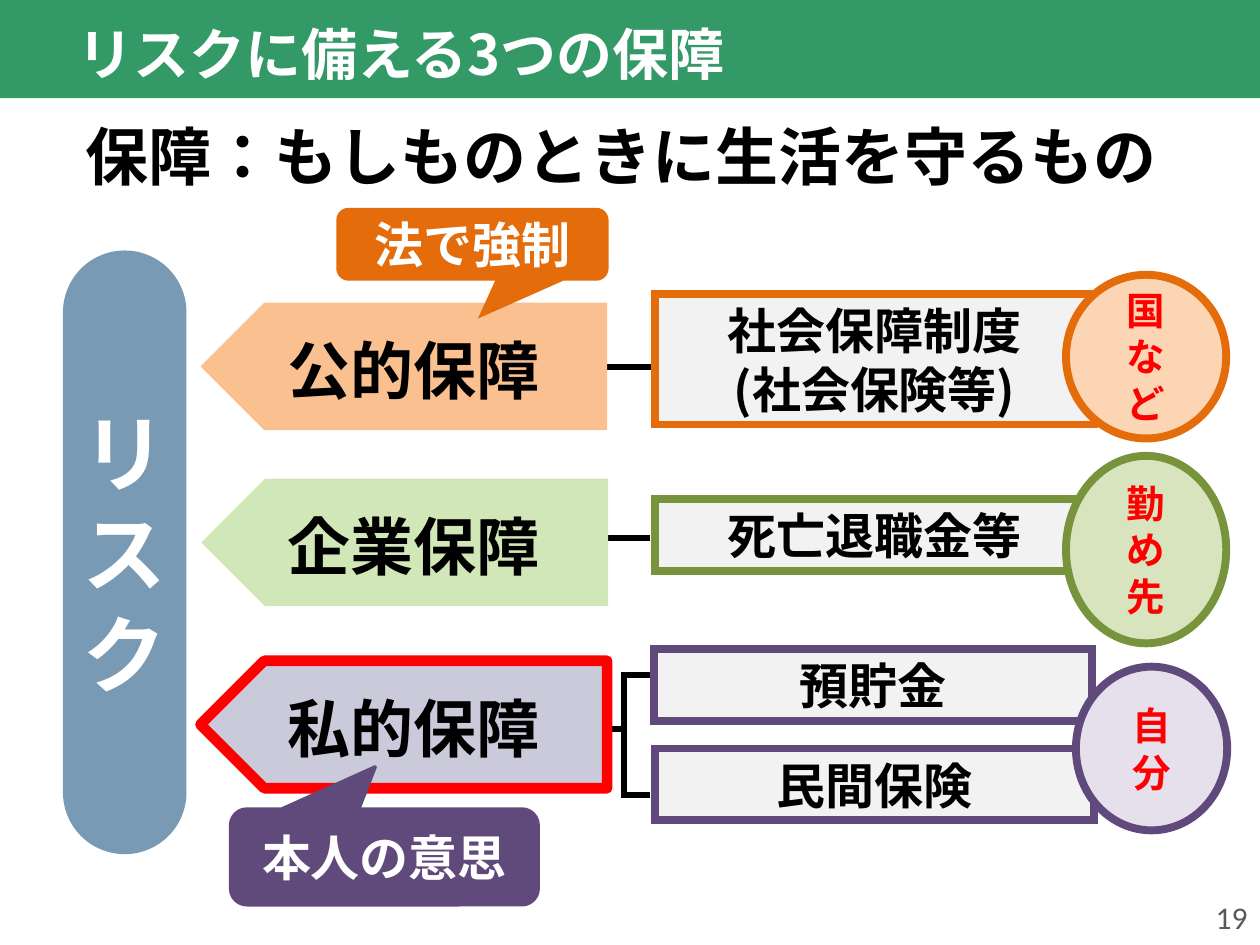
"""Build the slide on the three kinds of protection against risk."""
from typing import NamedTuple, Optional

from lxml import etree
from pptx import Presentation
from pptx.dml.color import RGBColor
from pptx.enum.lang import MSO_LANGUAGE_ID
from pptx.enum.shapes import MSO_CONNECTOR, MSO_SHAPE
from pptx.enum.text import MSO_ANCHOR, MSO_AUTO_SIZE, PP_ALIGN
from pptx.oxml.ns import qn
from pptx.util import Cm, Pt

RECTANGLE = MSO_SHAPE.RECTANGLE
ROUNDED = MSO_SHAPE.ROUNDED_RECTANGLE
OVAL = MSO_SHAPE.OVAL
PENTAGON = MSO_SHAPE.PENTAGON
CALLOUT = MSO_SHAPE.ROUNDED_RECTANGULAR_CALLOUT
STRAIGHT = MSO_CONNECTOR.STRAIGHT
MIDDLE = MSO_ANCHOR.MIDDLE
NO_AUTOFIT = MSO_AUTO_SIZE.NONE
LEFT, CENTER, RIGHT = PP_ALIGN.LEFT, PP_ALIGN.CENTER, PP_ALIGN.RIGHT
JAPANESE = MSO_LANGUAGE_ID.JAPANESE

JAPANESE_FONT = "Noto Sans CJK JP"
NUMBER_FONT = "Calibri"
TITLE_ONLY = 5
COLORS = {
    "banner": "339966", "white": "FFFFFF", "black": "000000", "red": "FF0000",
    "gray": "595959", "box": "F2F2F2", "risk": "799AB4",
    "orange": "E46C0A", "green": "77933C", "purple": "604A7B",
    "public arrow": "FAC090", "company arrow": "D2E7B8", "private arrow": "CBCADB",
    "public oval": "FCD5B5", "company oval": "D7E4BD", "private oval": "E6E0EC",
}


class Area(NamedTuple):
    """A place on the slide in centimetres."""
    left: float
    top: float
    width: float
    height: float


class TextStyle(NamedTuple):
    """The look of a text."""
    size: float
    color: str = "black"
    align: PP_ALIGN = CENTER
    font: str = JAPANESE_FONT
    bold: bool = True


class Block(NamedTuple):
    """A filled shape with optional outline and text."""
    kind: MSO_SHAPE
    area: Area
    fill: str
    line: Optional[str] = None
    line_width: float = 4.5
    lines: tuple = ()
    style: TextStyle = TextStyle(28)
    adjustments: tuple = ()
    margins: Optional[tuple] = None


class Arrow(NamedTuple):
    """A left-pointing arrow and its label."""
    label: str
    left: float
    top: float
    fill: str
    line: Optional[str] = None


def color(name: str) -> RGBColor:
    """Return the named colour."""
    return RGBColor.from_string(COLORS[name])


def lengths(values) -> list:
    """Turn centimetres into lengths."""
    return [Cm(value) for value in values]


def write_lines(frame, lines: tuple, style: TextStyle) -> None:
    """Write one paragraph per line, centred vertically."""
    frame.vertical_anchor = MIDDLE
    for index, line in enumerate(lines):
        paragraph = frame.add_paragraph() if index else frame.paragraphs[0]
        paragraph.alignment = style.align
        run = paragraph.add_run()
        run.text = line
        run.font.size = Pt(style.size)
        run.font.bold = style.bold
        run.font.name = style.font
        run.font.language_id = JAPANESE
        run.font.color.rgb = color(style.color)
        east_asian = etree.SubElement(run.font._element, qn("a:ea"))
        east_asian.set("typeface", style.font)


def add_text(slide, area: Area, text: str, style: TextStyle, wrap: bool = True) -> None:
    """Add a text box."""
    frame = slide.shapes.add_textbox(*lengths(area)).text_frame
    frame.word_wrap = wrap
    write_lines(frame, (text,), style)


def add_block(slide, block: Block):
    """Add a shape and return it."""
    shape = slide.shapes.add_shape(block.kind, *lengths(block.area))
    shape.shadow.inherit = False
    shape.fill.solid()
    shape.fill.fore_color.rgb = color(block.fill)
    if block.line:
        shape.line.color.rgb = color(block.line)
        shape.line.width = Pt(block.line_width)
        if block.kind == RECTANGLE:
            etree.SubElement(shape.element.spPr.find(qn("a:ln")), qn("a:miter"), lim="800000")
    else:
        shape.line.fill.background()
    for index, value in enumerate(block.adjustments):
        shape.adjustments[index] = value
    frame = shape.text_frame
    frame.word_wrap = True
    if block.margins:
        horizontal, vertical = lengths(block.margins)
        frame.margin_left = frame.margin_right = horizontal
        frame.margin_top = frame.margin_bottom = vertical
    write_lines(frame, block.lines, block.style)
    return shape


def add_line(slide, points: tuple) -> None:
    """Add a thick black connecting line."""
    connector = slide.shapes.add_connector(STRAIGHT, *lengths(points))
    connector.line.color.rgb = color("black")
    connector.line.width = Pt(3.5)
    etree.SubElement(connector.element.spPr, qn("a:effectLst"))


def add_arrow(slide, arrow: Arrow) -> None:
    """Add an arrow with its label."""
    area = Area(arrow.left, arrow.top, 8.2, 2.57)
    shape = add_block(slide, Block(PENTAGON, area, arrow.fill, arrow.line, 6))
    shape.rotation = 180
    label_area = Area(5.54, arrow.top + 0.44, 5.64, 1.8)
    add_text(slide, label_area, arrow.label, TextStyle(36, align=LEFT), wrap=False)


def add_title(slide) -> None:
    """Place the title on its banner."""
    title = slide.shapes.title
    banner = add_block(slide, Block(RECTANGLE, Area(0, 0, 25.4, 1.98), "banner"))
    title.element.addprevious(banner.element)
    title.left, title.top, title.width, title.height = lengths((1.3, 0.08, 17.53, 2))
    title.text_frame.auto_size = NO_AUTOFIT
    write_lines(title.text_frame, ("リスクに備える3つの保障",), TextStyle(32, "white", LEFT))


def main() -> None:
    """Build and save the presentation."""
    presentation = Presentation()
    presentation.slide_width, presentation.slide_height = Cm(25.4), Cm(19.05)
    slide = presentation.slides.add_slide(presentation.slide_layouts[TITLE_ONLY])
    add_title(slide)
    add_text(slide, Area(1.04, 2.13, 22.94, 2), "保障：もしものときに生活を守るもの", TextStyle(36))

    for points in (
        (11.96, 7.39, 13.18, 7.39), (11.96, 10.85, 13.1, 10.85),
        (11.94, 14.7, 12.55, 14.7), (12.52, 16.03, 13.1, 16.03),
        (12.52, 13.61, 13.1, 13.61), (12.57, 13.56, 12.57, 16.05),
    ):
        add_line(slide, points)

    for left, top, height, line, lines in (
        (13.21, 5.92, 2.64, "orange", ("社会保障制度", "(社会保険等)")),
        (13.21, 10.06, 1.45, "green", ("死亡退職金等",)),
        (13.18, 13.08, 1.45, "purple", ("預貯金",)),
        (13.21, 15.09, 1.45, "purple", ("民間保険",)),
    ):
        area = Area(left, top, 8.84, height)
        add_block(slide, Block(RECTANGLE, area, "box", line, lines=lines, margins=(0.25, 0)))

    add_block(slide, Block(ROUNDED, Area(1.27, 5.05, 2.49, 12.17), "risk", lines=tuple("リスク"),
                           style=TextStyle(48, "white"), adjustments=(0.5,), margins=(0, 0)))

    for arrow in (
        Arrow("公的保障", 4.04, 6.1, "public arrow"),
        Arrow("企業保障", 4.06, 9.65, "company arrow"),
        Arrow("私的保障", 4.04, 13.32, "private arrow", "red"),
    ):
        add_arrow(slide, arrow)

    for area, fill, line, lines in (
        (Area(21.49, 5.54, 3.23, 3.3), "public oval", "orange", ("国など",)),
        (Area(21.49, 9.19, 3.23, 3.78), "company oval", "green", ("勤", "め先")),
        (Area(21.69, 13.44, 3.05, 3.3), "private oval", "purple", ("自分",)),
    ):
        add_block(slide, Block(OVAL, area, fill, line, lines=lines,
                               style=TextStyle(22, "red"), margins=(0.5, 0)))

    for area, fill, line, text, tip in (
        (Area(6.78, 4.19, 5.49, 1.47), "orange", None, "法で強制", (0.02, 1.02)),
        (Area(4.65, 16.31, 6.2, 1.93), "purple", "purple", "本人の意思", (-0.03, -0.94)),
    ):
        add_block(slide, Block(CALLOUT, area, fill, line, 2, (text,),
                               TextStyle(28, "white"), (*tip, 0.17)))

    add_text(slide, Area(19.48, 17.98, 5.92, 1.02), "19",
             TextStyle(18, "gray", RIGHT, NUMBER_FONT, False))
    presentation.save("out.pptx")


if __name__ == "__main__":
    main()
